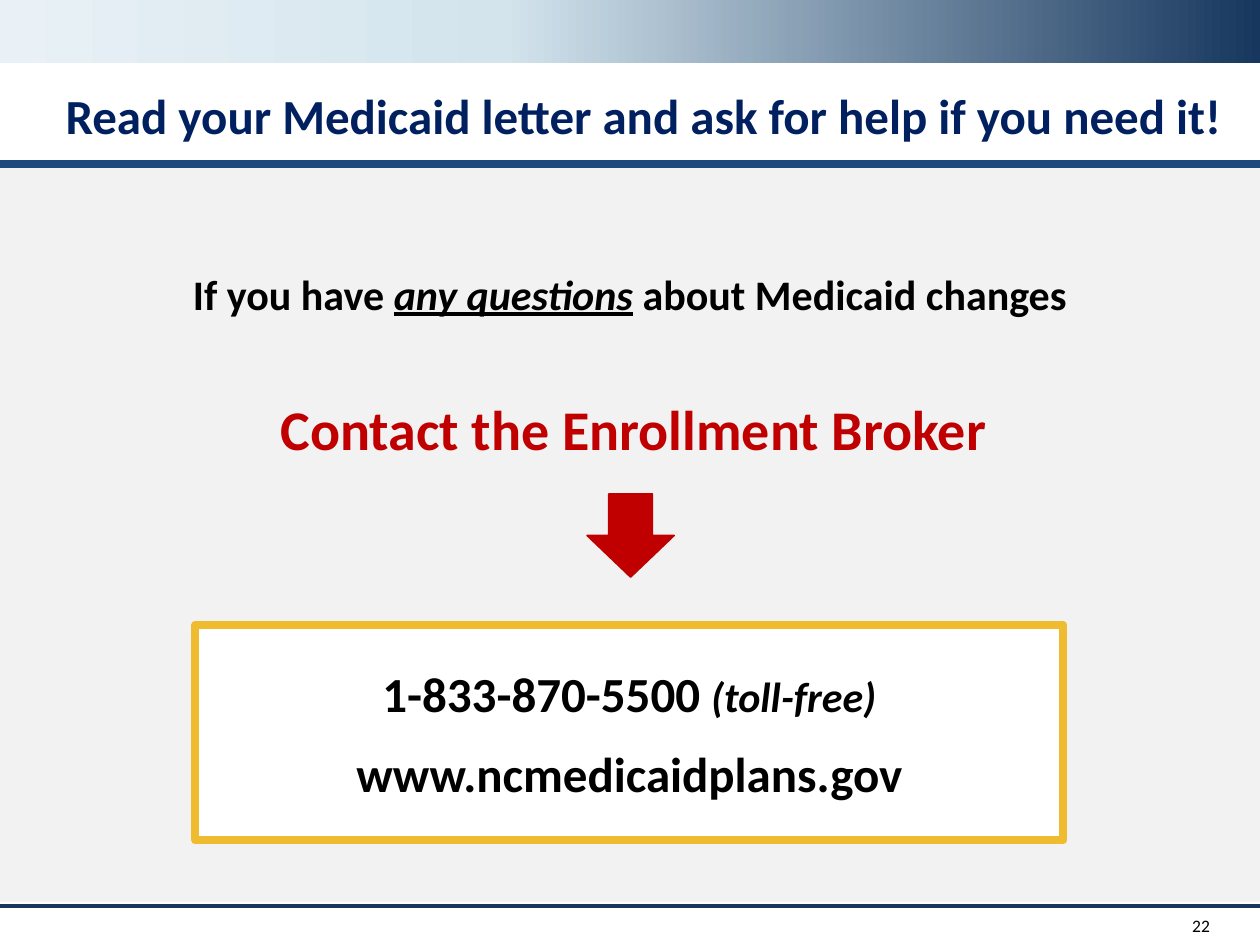
from copy import deepcopy
from dataclasses import dataclass

from lxml.etree import SubElement
from pptx import Presentation
from pptx.dml.color import RGBColor as RGB
from pptx.enum.shapes import MSO_CONNECTOR as CONNECTOR, MSO_SHAPE as SHAPE
from pptx.enum.text import MSO_ANCHOR as ANCHOR, MSO_AUTO_SIZE as AUTO_SIZE, PP_ALIGN as ALIGN
from pptx.oxml.ns import qn
from pptx.util import Inches, Pt


@dataclass(frozen=True)
class Theme:
    font: str = "Calibri"
    text: RGB = RGB(0, 0, 0)
    white: RGB = RGB(255, 255, 255)
    panel: RGB = RGB.from_string("F2F2F2")
    title: RGB = RGB.from_string("002060")
    navy: RGB = RGB.from_string("17375E")
    blue: RGB = RGB.from_string("1F497D")
    red: RGB = RGB.from_string("C00000")
    gold: RGB = RGB.from_string("EFBB2F")
    pale: RGB = RGB.from_string("E9F1F6")
    sky: RGB = RGB.from_string("D3E4ED")
    number_size: Pt = Pt(10)
    body_size: Pt = Pt(24)
    title_size: Pt = Pt(28)
    call_size: Pt = Pt(32)


THEME = Theme()


def style(font, size, color=THEME.text, bold=True):
    font.name, font.size, font.bold = THEME.font, size, bold
    font.color.rgb = color


def add_spans(para, *texts):
    spans = []
    for text in texts:
        span = para.add_run()
        span.text = text
        spans.append(span)
    return spans


def add_block(page, kind, left, top, width, height, fill=None, line=None, weight=1):
    block = page.shapes.add_shape(kind, Inches(left), Inches(top), Inches(width), Inches(height))
    block.shadow.inherit = False
    if fill is not None:
        block.fill.solid()
        block.fill.fore_color.rgb = fill
    if line is None:
        block.line.fill.background()
    else:
        block.line.color.rgb = line
        block.line.width = Pt(weight)
    return block


def add_banner(page):
    """Add the top band, fading from pale on the left to navy on the right."""
    banner = add_block(page, SHAPE.RECTANGLE, 0, 0, 10, 0.5)
    banner.fill.gradient()
    banner.fill.gradient_angle = 0
    stop_list = banner._element.spPr.find(qn("a:gradFill")).find(qn("a:gsLst"))
    stop_list.append(deepcopy(stop_list[-1]))
    colors = (THEME.pale, 0), (THEME.sky, 0.4), (THEME.navy, 1)
    for stop, (color, position) in zip(banner.fill.gradient_stops, colors):
        stop.color.rgb = color
        stop.position = position


def add_rule(page, top, color, weight):
    rule = page.shapes.add_connector(
        CONNECTOR.STRAIGHT, Inches(0), Inches(top), Inches(10), Inches(top))
    rule.line.color.rgb = color
    rule.line.width = Pt(weight)
    SubElement(rule._element.spPr, qn("a:effectLst"))


def add_text(page, left, top, width, height, size, color=THEME.text, align=ALIGN.CENTER,
             bold=True, wrap=True, anchor=ANCHOR.TOP):
    """Add a one-paragraph text box and return its empty paragraph."""
    box = page.shapes.add_textbox(Inches(left), Inches(top), Inches(width), Inches(height))
    frame = box.text_frame
    frame.word_wrap = wrap
    frame.vertical_anchor = anchor
    para = frame.paragraphs[0]
    para.alignment = align
    style(para.font, size, color, bold)
    return para


def set_title(page, text):
    title = page.shapes.title
    title.left, title.top = Inches(0.42), Inches(0.68)
    title.width, title.height = Inches(9.42), Inches(0.6)
    frame = title.text_frame
    frame.text = text
    frame.auto_size = AUTO_SIZE.NONE
    frame.vertical_anchor = ANCHOR.TOP
    para = frame.paragraphs[0]
    para.alignment = ALIGN.LEFT
    para.line_spacing = 0.9
    style(para.font, THEME.title_size, THEME.title)


def add_contact_box(page):
    box = add_block(page, SHAPE.RECTANGLE, 1.55, 4.96, 6.89, 1.71, THEME.white, THEME.gold, 4.5)
    frame = box.text_frame
    frame.vertical_anchor = ANCHOR.MIDDLE
    phone, website = frame.paragraphs[0], frame.add_paragraph()
    for para in (phone, website):
        para.alignment = ALIGN.CENTER
        para.space_after = Pt(12)
        style(para.font, THEME.title_size)
    number, note = add_spans(phone, "1-833-870-5500 ", "(toll-free)")
    style(number.font, THEME.title_size)
    style(note.font, THEME.body_size)
    note.font.italic = True
    website.text = "www.ncmedicaidplans.gov"


def main():
    deck = Presentation()
    deck.slide_width, deck.slide_height = Inches(10), Inches(7.5)
    page = deck.slides.add_slide(deck.slide_layouts.get_by_name("Title Only"))

    add_banner(page)
    set_title(page, "Read your Medicaid letter and ask for help if you need it!")
    add_rule(page, 7.19, THEME.navy, 2.25)
    number = add_text(page, 9.08, 7.19, 0.62, 0.31, THEME.number_size,
                      align=ALIGN.RIGHT, bold=False, anchor=ANCHOR.MIDDLE)
    number.text = "22"
    add_block(page, SHAPE.RECTANGLE, 0, 1.3, 10, 5.86, THEME.panel)
    add_rule(page, 1.3, THEME.blue, 4.5)

    add_contact_box(page)
    question = add_text(page, 1.22, 2.08, 7.56, 0.5, THEME.body_size)
    _, emphasis, _ = add_spans(question, "If you have ", "any questions", " about Medicaid changes")
    emphasis.font.italic = emphasis.font.underline = True
    call = add_text(page, 2.13, 3.08, 5.86, 0.64, THEME.call_size, THEME.red,
                    align=ALIGN.LEFT, wrap=False)
    call.text = "Contact the Enrollment Broker"
    add_block(page, SHAPE.DOWN_ARROW, 4.66, 3.92, 0.69, 0.66, THEME.red, THEME.red)

    deck.save("out.pptx")


if __name__ == "__main__":
    main()
